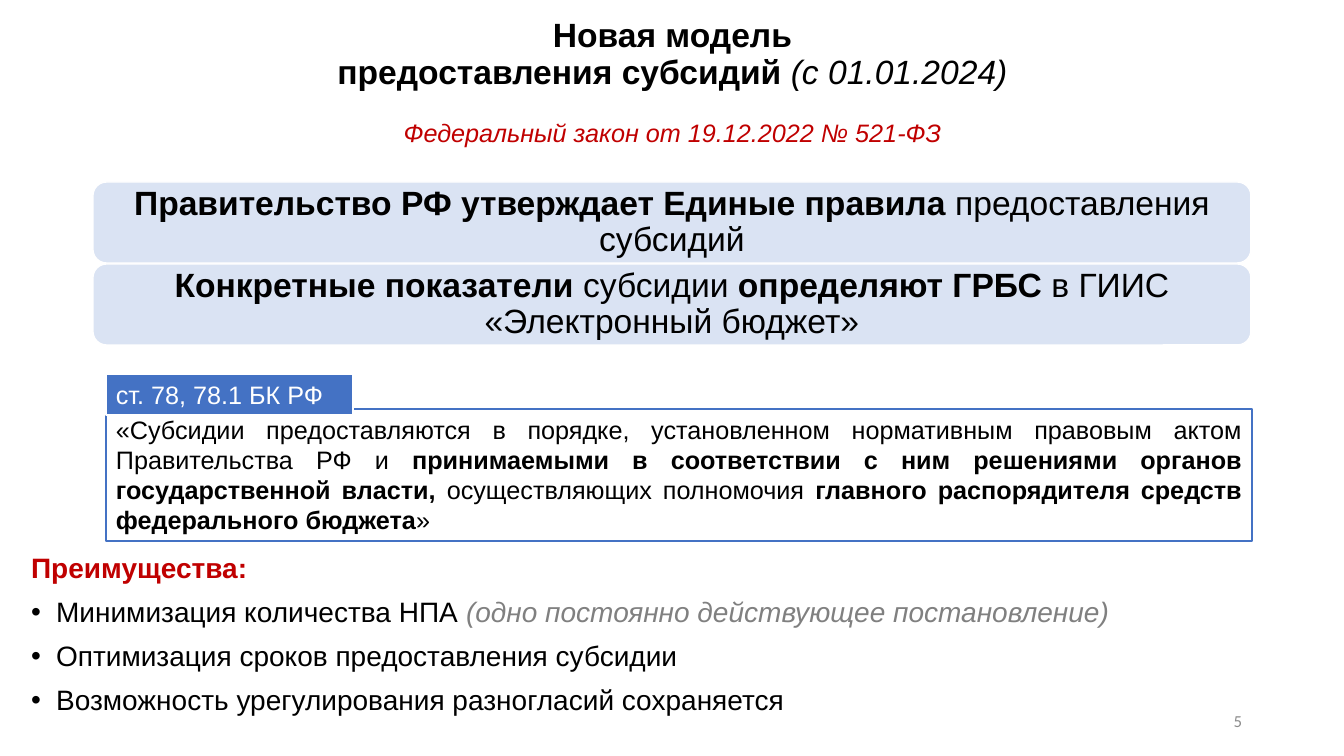
"""Build the slide on the new model of granting subsidies."""
import pptx
import pptx.util
import pptx.dml.color
import pptx.enum.shapes
import pptx.enum.text
import lxml.etree

ink = pptx.dml.color.RGBColor.from_string
Pt = pptx.util.Pt
Align = pptx.enum.text.PP_ALIGN
Anchor = pptx.enum.text.MSO_ANCHOR
Shape = pptx.enum.shapes.MSO_SHAPE
BLACK, RED, GREY, BLUE, WHITE = "000000", "C00000", "808080", "4472C4", "FFFFFF"


def px(*sizes):
    return [round(size * 914400 / 100.8) for size in sizes]


def write(frame, *runs, size=18, hue=BLACK, face="Arial", align=Align.CENTER, lead=1.0, gap=0):
    """Add one paragraph; each run is (text, style letters, optional colour)."""
    first = frame.paragraphs[0]
    para = frame.add_paragraph() if first.runs else first
    para.alignment = align
    para.line_spacing = lead
    para.space_before = Pt(gap)
    frame.word_wrap = True
    for text, style, *tint in runs:
        run = para.add_run()
        run.text = text
        run.font.name = face
        run.font.size = Pt(size)
        run.font.bold = "b" in style
        run.font.italic = "i" in style
        run.font.color.rgb = ink(tint[0] if tint else hue)
    return para


deck = pptx.Presentation()
deck.slide_width, deck.slide_height = px(1344, 756)
slide = deck.slides.add_slide(deck.slide_layouts[1])
shapes = slide.shapes

title, body = shapes.title, slide.placeholders[1]
title.left, title.top, title.width, title.height = px(93, 0, 1159, 146)
body.left, body.top, body.width, body.height = px(21, 549, 1302, 260)
for holder in (title, body):
    holder.text_frame.auto_size = pptx.enum.text.MSO_AUTO_SIZE.NONE

head = title.text_frame
head.vertical_anchor = Anchor.MIDDLE
head.margin_bottom = px(41)[0]
write(head, ("Новая модель", "b"), size=24, lead=0.9)
write(head, ("предоставления субсидий ", "b"), ("(с 01.01.2024)", "i"), size=24, lead=0.9)

perks = [
    [("Преимущества:", "b", RED)],
    [("Минимизация количества НПА ", ""), ("(одно постоянно действующее постановление)", "i", GREY)],
    [("Оптимизация сроков предоставления субсидии", "")],
    [("Возможность урегулирования разногласий сохраняется", "")],
]
for row, runs in enumerate(perks):
    para = write(body.text_frame, *runs, size=20, align=Align.JUSTIFY, lead=0.9, gap=10)
    props = para._p.get_or_add_pPr()
    dent = px(25)[0] if row else 0
    props.set("marL", str(dent))
    props.set("indent", str(-dent))
    mark = lxml.etree.SubElement(props, pptx.oxml.ns.qn("a:buChar" if row else "a:buNone"))
    if row:
        mark.set("char", "•")

law = shapes.add_textbox(*px(193, 112, 959, 40)).text_frame
write(law, ("Федеральный закон от 19.12.2022 № 521-ФЗ", "i"), hue=RED)

rules = [
    [("Правительство РФ утверждает Единые правила ", "b"), ("предоставления субсидий", "")],
    [("Конкретные показатели ", "b"), ("субсидии ", ""), ("определяют ГРБС ", "b"),
     ("в ГИИС «Электронный бюджет»", "")],
]
quote = [
    ("«Субсидии предоставляются в порядке, установленном нормативным правовым актом "
     "Правительства РФ и ", ""),
    ("принимаемыми в соответствии с ним решениями органов государственной власти, ", "b"),
    ("осуществляющих полномочия ", ""),
    ("главного распорядителя средств федерального бюджета", "b"),
    ("»", ""),
]
label = [("ст. 78, 78.1 БК РФ", "", WHITE)]
card = dict(size=24, lead=0.9)
boxes = [(Shape.ROUNDED_RECTANGLE, (93, 182 + 82 * row, 1158, 81), "DAE3F3", WHITE, 1, runs, card)
         for row, runs in enumerate(rules)]
boxes += [
    (Shape.RECTANGLE, (106, 409, 1146, 132), WHITE, BLUE, 1, quote, dict(align=Align.JUSTIFY)),
    (Shape.RECTANGLE, (106, 374, 247, 41), BLUE, WHITE, 1.5, label, dict(align=Align.LEFT)),
]
for kind, place, fill, edge, width, runs, form in boxes:
    box = shapes.add_shape(kind, *px(*place))
    box.shadow.inherit = False
    box.fill.solid()
    box.fill.fore_color.rgb = ink(fill)
    box.line.color.rgb = ink(edge)
    box.line.width = Pt(width)
    box.text_frame.vertical_anchor = Anchor.MIDDLE if form is card else Anchor.TOP
    write(box.text_frame, *runs, **form)

page = shapes.add_textbox(*px(950, 701, 302, 40)).text_frame
page.vertical_anchor = Anchor.MIDDLE
write(page, ("5", ""), size=12, hue="8C8C8C", face="Calibri", align=Align.RIGHT)

deck.save("out.pptx")
